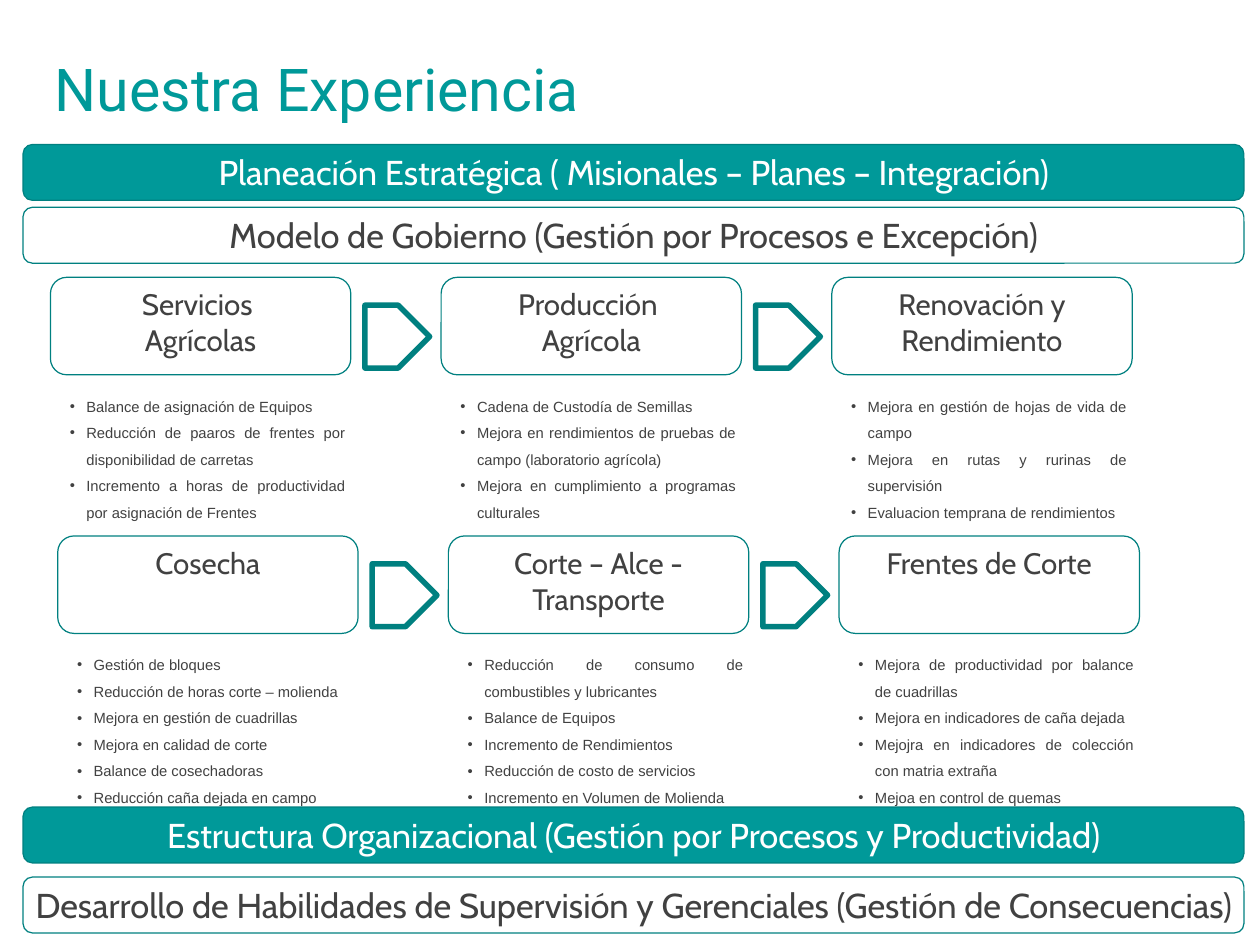
from dataclasses import dataclass

from lxml.etree import SubElement
from pptx import Presentation
from pptx.dml.color import RGBColor
from pptx.enum.shapes import MSO_SHAPE as Preset
from pptx.enum.text import MSO_ANCHOR as Anchor, PP_ALIGN as Align
from pptx.oxml.ns import qn
from pptx.util import Pt

TITLE = "Nuestra Experiencia"
BANDS = [
    (117.4, True, "Planeación Estratégica ( Misionales – Planes – Integración)"),
    (168.5, False, "Modelo de Gobierno (Gestión por Procesos e Excepción)"),
    (655.9, True, "Estructura Organizacional (Gestión por Procesos y Productividad)"),
    (712.8, False, "Desarrollo de Habilidades de Supervisión y Gerenciales (Gestión de Consecuencias)"),
]
STAGES = [
    [
        ("Servicios \nAgrícolas", [
            "Balance de asignación de Equipos",
            "Reducción de paaros de frentes por disponibilidad de carretas",
            "Incremento a horas de productividad por asignación de Frentes",
        ]),
        ("Producción \nAgrícola", [
            "Cadena de Custodía de Semillas",
            "Mejora en rendimientos de pruebas de campo (laboratorio agrícola)",
            "Mejora en cumplimiento a programas culturales",
        ]),
        ("Renovación y Rendimiento", [
            "Mejora en gestión de hojas de vida de campo",
            "Mejora en rutas y rurinas de supervisión",
            "Evaluacion temprana de rendimientos",
        ]),
    ],
    [
        ("Cosecha", [
            "Gestión de bloques",
            "Reducción de horas corte – molienda",
            "Mejora en gestión de cuadrillas",
            "Mejora en calidad de corte",
            "Balance de cosechadoras",
            "Reducción caña dejada en campo",
        ]),
        ("Corte – Alce - Transporte", [
            "Reducción de consumo de combustibles y lubricantes",
            "Balance de Equipos",
            "Incremento de Rendimientos",
            "Reducción de costo de servicios",
            "Incremento en Volumen de Molienda",
        ]),
        ("Frentes de Corte", [
            "Mejora de productividad por balance de cuadrillas",
            "Mejora en indicadores de caña dejada",
            "Mejojra en indicadores de colección con matria extraña",
            "Mejoa en control de quemas",
        ]),
    ],
]
ROW_ORIGINS = [(41, 225.4), (46.9, 435.6)]
LIST_HEIGHTS = [118, 139.7]
COLUMN_PITCH = 317.5
CARD_WIDTH, CARD_HEIGHT = 244.1, 79.2


@dataclass(frozen=True)
class Theme:
    teal: RGBColor = RGBColor(0x00, 0x99, 0x99)
    outline: RGBColor = RGBColor(0x00, 0x80, 0x80)
    ink: RGBColor = RGBColor(0x41, 0x41, 0x41)
    white: RGBColor = RGBColor(0xFF, 0xFF, 0xFF)
    title: tuple = ("Roboto", 48)
    band: tuple = ("Cabin", 28)
    card: tuple = ("Cabin", 24)
    item: tuple = ("Arial", 12)


THEME = Theme()


def write(frame, text, style, color, align):
    frame.text = text
    for paragraph in frame.paragraphs:
        paragraph.alignment = align
        for run in paragraph.runs:
            run.font.name, run.font.size = style[0], Pt(style[1])
            run.font.color.rgb = color


def add_outlined(slide, preset, left, top, width, height, weight=1, filled=False):
    outlined = slide.shapes.add_shape(preset, Pt(left), Pt(top), Pt(width), Pt(height))
    outlined.shadow.inherit = False
    if filled:
        outlined.fill.solid()
        outlined.fill.fore_color.rgb = THEME.teal
    else:
        outlined.fill.background()
    outlined.line.color.rgb = THEME.outline
    outlined.line.width = Pt(weight)
    outlined.text_frame.vertical_anchor = Anchor.TOP
    return outlined


def add_frame(slide, left, top, width, height, inset_x, inset_y):
    frame = slide.shapes.add_textbox(Pt(left), Pt(top), Pt(width), Pt(height)).text_frame
    frame.word_wrap = True
    frame.margin_left = frame.margin_right = Pt(inset_x)
    frame.margin_top = frame.margin_bottom = Pt(inset_y)
    return frame


def add_band(slide, top, filled, caption):
    band = add_outlined(slide, Preset.ROUNDED_RECTANGLE, 18.7, top, 992.2, 45.4, filled=filled)
    band.text_frame.word_wrap = False
    write(band.text_frame, caption, THEME.band, THEME.white if filled else THEME.ink, Align.CENTER)


def add_stage(slide, left, top, heading, gains, list_height):
    card = add_outlined(slide, Preset.ROUNDED_RECTANGLE, left, top, CARD_WIDTH, CARD_HEIGHT)
    write(card.text_frame, heading, THEME.card, THEME.ink, Align.CENTER)
    gains_frame = add_frame(slide, left + 5.7, top + 85.3, CARD_WIDTH, list_height, 10, 5)
    write(gains_frame, "\n".join(gains), THEME.item, THEME.ink, Align.JUSTIFY)
    for gain in gains_frame.paragraphs:
        gain.line_spacing = 1.5
        properties = gain._p.get_or_add_pPr()
        properties.set("marL", str(Pt(13.5)))
        properties.set("indent", str(-Pt(13.5)))
        SubElement(properties, qn("a:buFont")).set("typeface", "Arial")
        SubElement(properties, qn("a:buChar")).set("char", "•")


def main():
    deck = Presentation()
    deck.slide_width, deck.slide_height = Pt(1024), Pt(768)
    slide = deck.slides.add_slide(deck.slide_layouts[6])

    title_frame = add_frame(slide, 44.6, 42.5, 745.2, 58.3, 0, 0)
    title_frame.vertical_anchor = Anchor.MIDDLE
    write(title_frame, TITLE, THEME.title, THEME.teal, Align.LEFT)

    for top, filled, caption in BANDS:
        add_band(slide, top, filled, caption)

    for (origin, top), stages, list_height in zip(ROW_ORIGINS, STAGES, LIST_HEIGHTS):
        for column, (heading, gains) in enumerate(stages):
            left = origin + column * COLUMN_PITCH
            add_stage(slide, left, top, heading, gains, list_height)
            if column < len(stages) - 1:
                add_outlined(slide, Preset.PENTAGON, left + 255.6, top + 22.6, 52.6, 51.1, weight=4.5)

    deck.save("out.pptx")


if __name__ == "__main__":
    main()
